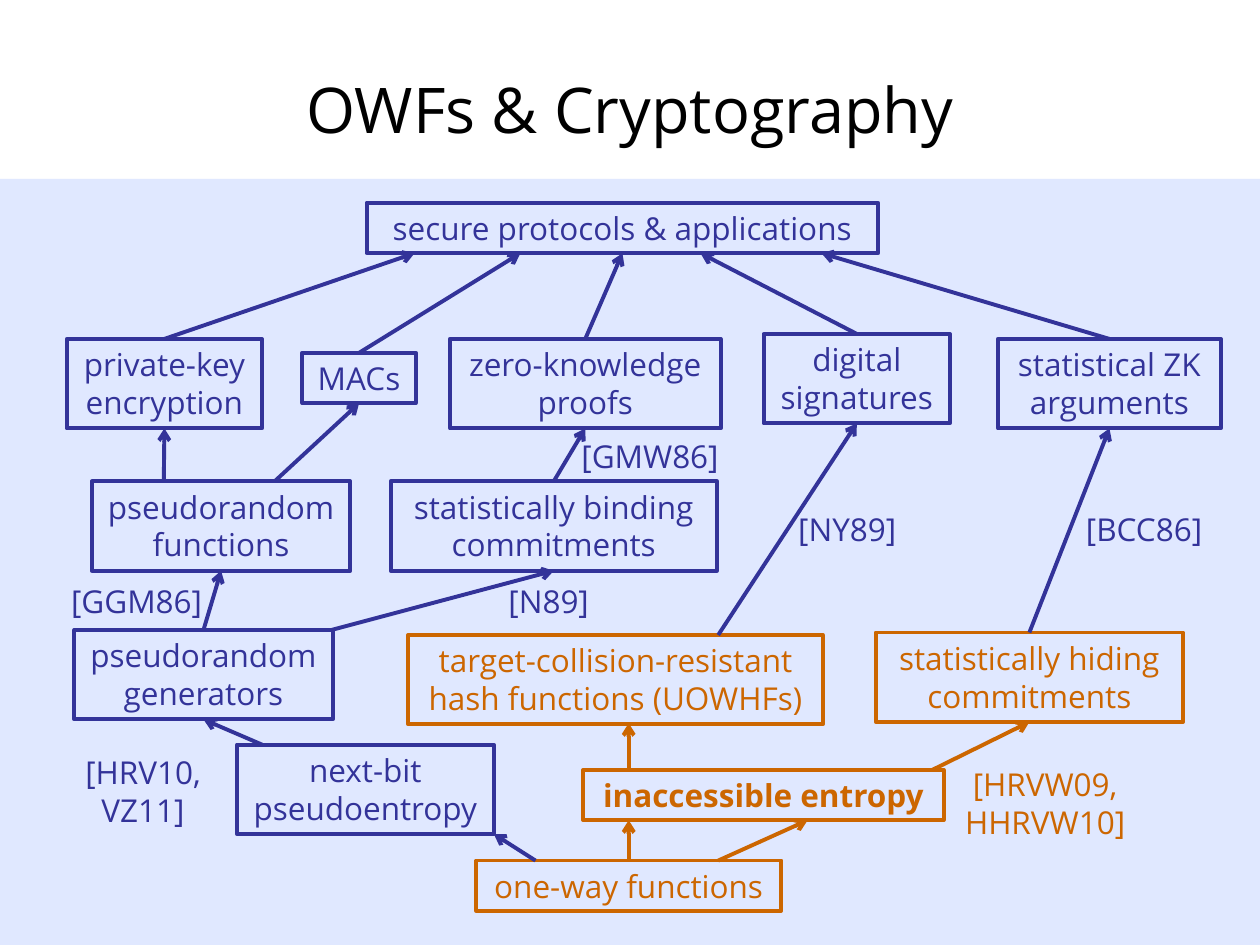
from dataclasses import dataclass
from typing import Union

from lxml import etree
from pptx import Presentation
from pptx import util as u
from pptx.dml.color import RGBColor
from pptx.enum import shapes, text
from pptx.oxml.ns import qn

PX = 9144  # 100 px to the inch
NAVY = RGBColor(0x33, 0x33, 0x99)
RUST = RGBColor(0xCC, 0x66, 0x00)
BLUE = RGBColor(0x33, 0x66, 0xFF)
BLACK = RGBColor(0, 0, 0)
FONT = "Open Sans"
TOP, BOTTOM = 0, 2


@dataclass
class Box:
    name: str
    x: int
    y: int
    w: int
    words: str
    hue: RGBColor = NAVY
    bold: bool = False


@dataclass
class Label:
    x: int
    y: int
    w: int
    words: str
    hue: RGBColor = NAVY


@dataclass
class Arrow:
    """Each end is a box name (top to start, bottom to end) or a point."""
    start: Union[str, tuple]
    end: Union[str, tuple]
    hue: RGBColor = NAVY


BOXES = [
    Box("apps", 291, 161, 406, "secure protocols & applications"),
    Box("key", 53, 269, 155, "private-key\nencryption"),
    Box("mac", 240, 280, 90, "MACs"),
    Box("proof", 357, 269, 215, "zero-knowledge\vproofs"),
    Box("sign", 606, 265, 148, "digital\vsignatures"),
    Box("stat", 792, 269, 177, "statistical ZK\varguments"),
    Box("prf", 73, 382, 205, "pseudorandom\nfunctions"),
    Box("bind", 310, 382, 259, "statistically binding\vcommitments"),
    Box("prg", 59, 500, 205, "pseudorandom\vgenerators"),
    Box("hash", 324, 504, 329,
        "target-collision-resistant\nhash functions (UOWHFs)", RUST),
    Box("hide", 695, 502, 244, "statistically hiding\ncommitments", RUST),
    Box("next", 188, 591, 204, "next-bit\vpseudoentropy"),
    Box("inacc", 463, 611, 286, "inaccessible entropy", RUST, True),
    Box("owf", 378, 683, 242, "one-way functions", RUST),
]

LABELS = [
    Label(451, 342, 130, "[GMW86]"),
    Label(621, 400, 103, "[NY89]"),
    Label(849, 400, 118, "[BCC86]"),
    Label(45, 457, 127, "[GGM86]"),
    Label(392, 457, 87, "[N89]"),
    Label(54, 593, 119, "[HRV10,\vVZ11]"),
    Label(754, 602, 151, "[HRVW09,\vHHRVW10]", RUST),
]

ARROWS = [
    Arrow("key", (329, 201)),
    Arrow("mac", (413, 201)),
    Arrow("proof", "apps"),
    Arrow("sign", (556, 201)),
    Arrow("stat", (652, 201)),
    Arrow((130, 382), "key"),
    Arrow((218, 382), "mac"),
    Arrow("bind", "proof"),
    Arrow((570, 504), "sign"),
    Arrow("hide", "stat"),
    Arrow("prg", "prf"),
    Arrow((263, 500), "bind"),
    Arrow((208, 591), "prg"),
    Arrow((425, 683), (392, 662)),
    Arrow((499, 611), (499, 574), RUST),
    Arrow((740, 611), "hide", RUST),
    Arrow("owf", (499, 651), RUST),
    Arrow((570, 683), (641, 651), RUST),
]


def tall(words: str) -> int:
    return 71 if len(words.splitlines()) > 1 else 40


def style(frame, size: int, hue: RGBColor, bold: bool = False) -> None:
    for par in frame.paragraphs:
        par.alignment = text.PP_ALIGN.CENTER
        for run in par.runs:
            run.font.name = FONT
            run.font.size = u.Pt(size)
            run.font.bold = bold
            run.font.color.rgb = hue


def write(shape, words: str, hue: RGBColor, bold: bool = False) -> None:
    frame = shape.text_frame
    frame.text = words
    frame.word_wrap = False
    frame.auto_size = text.MSO_AUTO_SIZE.SHAPE_TO_FIT_TEXT
    frame.vertical_anchor = text.MSO_ANCHOR.TOP
    style(frame, 18, hue, bold)


def draw_panel(slide) -> None:
    panel = slide.shapes.add_shape(
        shapes.MSO_SHAPE.RECTANGLE, 0, 142 * PX, 1000 * PX, 608 * PX)
    panel.shadow.inherit = False
    panel.line.fill.background()
    panel.fill.solid()
    panel.fill.fore_color.rgb = BLUE
    tint = panel.fill._xPr.find(".//" + qn("a:srgbClr"))
    etree.SubElement(tint, qn("a:alpha"), val="15000")


def draw_box(slide, box: Box):
    shape = slide.shapes.add_shape(
        shapes.MSO_SHAPE.RECTANGLE, box.x * PX, box.y * PX,
        box.w * PX, tall(box.words) * PX)
    shape.shadow.inherit = False
    shape.fill.background()
    shape.line.color.rgb = box.hue
    shape.line.width = u.Pt(2.25)
    write(shape, box.words, box.hue, box.bold)
    return shape


def draw_label(slide, label: Label) -> None:
    shape = slide.shapes.add_textbox(
        label.x * PX, label.y * PX, label.w * PX, tall(label.words) * PX)
    write(shape, label.words, label.hue)


def locate(end: Union[str, tuple], side: int, drawn: dict) -> tuple:
    if isinstance(end, tuple):
        return end[0] * PX, end[1] * PX
    box = drawn[end]
    drop = box.height if side == BOTTOM else 0
    return box.left + box.width // 2, box.top + drop


def draw_arrow(slide, arrow: Arrow, drawn: dict) -> None:
    line = slide.shapes.add_connector(
        shapes.MSO_CONNECTOR.STRAIGHT,
        *locate(arrow.start, TOP, drawn), *locate(arrow.end, BOTTOM, drawn))
    if arrow.start in drawn:
        line.begin_connect(drawn[arrow.start], TOP)
    if arrow.end in drawn:
        line.end_connect(drawn[arrow.end], BOTTOM)
    line.line.color.rgb = arrow.hue
    line.line.width = u.Pt(2.25)
    props = line._element.spPr
    etree.SubElement(props.find(qn("a:ln")), qn("a:tailEnd"), type="arrow")
    etree.SubElement(props, qn("a:effectLst"))


def main() -> None:
    deck = Presentation()
    deck.slide_width, deck.slide_height = 1000 * PX, 750 * PX
    slide = deck.slides.add_slide(deck.slide_layouts[5])
    draw_panel(slide)

    title = slide.shapes.title
    title.left, title.top = 50 * PX, 36 * PX
    title.width, title.height = 900 * PX, 100 * PX
    title.text_frame.text = "OWFs & Cryptography"
    title.text_frame.vertical_anchor = text.MSO_ANCHOR.MIDDLE
    style(title.text_frame, 36, BLACK)

    drawn = {box.name: draw_box(slide, box) for box in BOXES}
    for arrow in ARROWS:
        draw_arrow(slide, arrow, drawn)
    for label in LABELS:
        draw_label(slide, label)
    deck.save("out.pptx")


if __name__ == "__main__":
    main()
